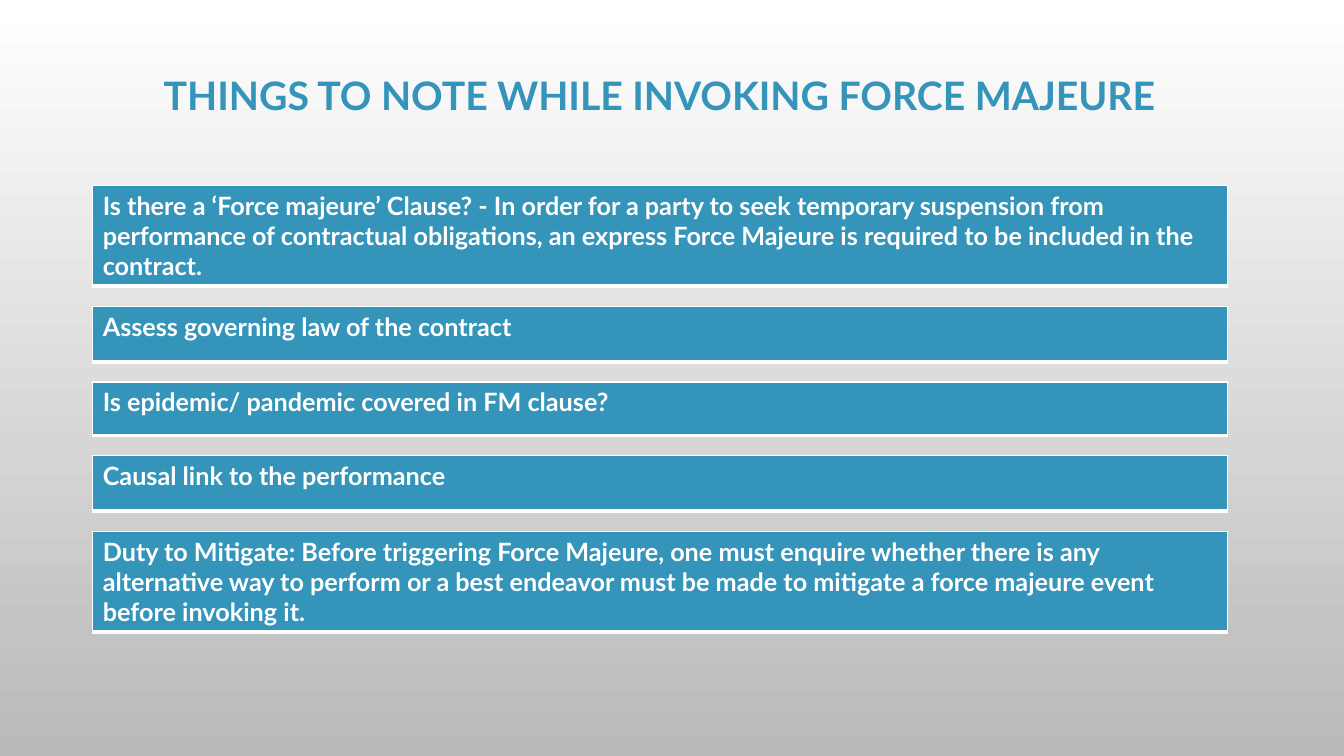
from lxml import etree
from pptx import Presentation
from pptx.dml.color import RGBColor
from pptx.enum.text import MSO_ANCHOR, PP_ALIGN
from pptx.oxml import parse_xml
from pptx.oxml.ns import nsdecls
from pptx.util import Pt

BLUE = RGBColor(0x34, 0x94, 0xBA)
WHITE = RGBColor(0xFF, 0xFF, 0xFF)
GREY = RGBColor(0xB9, 0xB9, 0xB9)

LEFT, WIDTH, GAP = 66.24, 810.72, 14.4
BORDERS = [("lnL", 1), ("lnR", 1), ("lnT", 1), ("lnB", 3)]
NOTES = [
    (72, "Is there a ‘Force majeure’ Clause? - In order for a party to seek temporary "
         "suspension from performance of contractual obligations, an express Force Majeure "
         "is required to be included in the contract."),
    (39.6, "Assess governing law of the contract"),
    (38.2, "Is epidemic/ pandemic covered in FM clause?"),
    (39.6, "Causal link to the performance"),
    (72, "Duty to Mitigate: Before triggering Force Majeure, one must enquire whether there "
         "is any alternative way to perform or a best endeavor must be made to mitigate a "
         "force majeure event before invoking it."),
]


def add_bold_run(p, text, size, color):
    r = p.add_run()
    r.text = text
    r.font.name = "Lato"
    r.font.size = Pt(size)
    r.font.bold = True
    r.font.color.rgb = color


def set_borders(cell):
    """Draw white cell borders, thicker at the bottom."""
    tc_pr = cell._tc.get_or_add_tcPr()
    for i, (side, width) in enumerate(BORDERS):
        ln = parse_xml(f'<a:{side} {nsdecls("a")} w="{Pt(width)}"><a:solidFill>'
                       f'<a:srgbClr val="{WHITE}"/></a:solidFill></a:{side}>')
        tc_pr.insert(i, ln)


prs = Presentation()
prs.slide_width, prs.slide_height = Pt(960), Pt(540)
s = prs.slides.add_slide(prs.slide_layouts[6])

bg = s.background.fill
bg.gradient()
bg.gradient_angle = 270
for stop, position, color in zip(bg.gradient_stops, (0, 1), (WHITE, GREY)):
    stop.position = position
    stop.color.rgb = color

title = s.shapes.add_textbox(Pt(57), Pt(42.5), Pt(828), Pt(55.4))
tf = title.text_frame
tf.word_wrap = True
tf.vertical_anchor = MSO_ANCHOR.MIDDLE
p = tf.paragraphs[0]
p.alignment = PP_ALIGN.CENTER
p.line_spacing = 0.9
add_bold_run(p, "THINGS TO NOTE WHILE INVOKING FORCE MAJEURE", 28, BLUE)

top = 132.5
for height, text in NOTES:
    table = s.shapes.add_table(1, 1, Pt(LEFT), Pt(top), Pt(WIDTH), Pt(height)).table
    cell = table.cell(0, 0)
    cell.fill.solid()
    cell.fill.fore_color.rgb = BLUE
    set_borders(cell)
    add_bold_run(cell.text_frame.paragraphs[0], text, 18, WHITE)
    top += height + GAP

prs.save("out.pptx")
